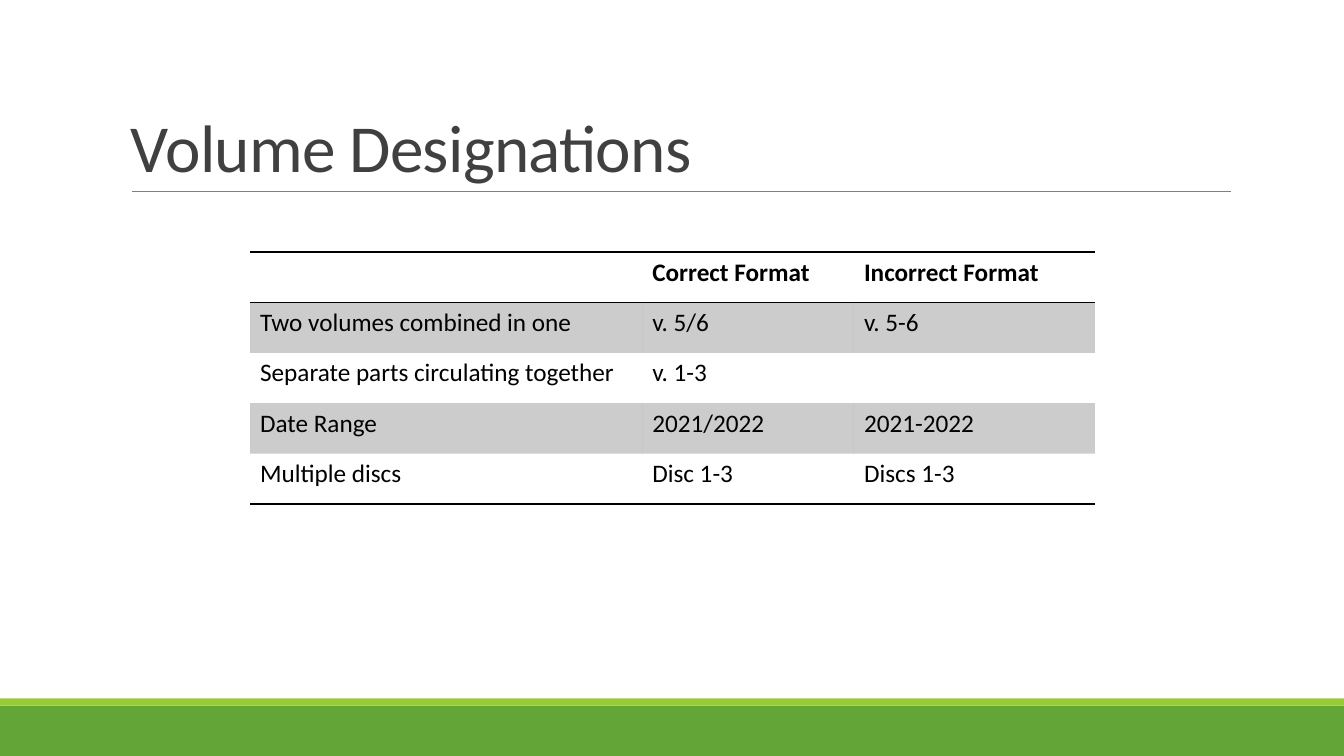
from dataclasses import dataclass

from lxml import etree
from pptx import Presentation
from pptx.dml.color import RGBColor
from pptx.enum.shapes import MSO_CONNECTOR, MSO_SHAPE
from pptx.enum.text import MSO_ANCHOR
from pptx.oxml.ns import qn
from pptx.util import Inches, Pt

RECTANGLE = MSO_SHAPE.RECTANGLE
STRAIGHT = MSO_CONNECTOR.STRAIGHT
BOTTOM = MSO_ANCHOR.BOTTOM
PLAIN_TABLE_STYLE = "{2D5ABB26-0587-4C30-8999-92F81FD0307C}"


@dataclass(frozen=True)
class Theme:
    font: str = "Calibri"
    title_size: int = 48
    table_size: int = 18
    title: str = "404040"
    ink: str = "000000"
    rule: str = "808080"
    green: str = "63A537"
    lime: str = "99CB38"
    band_opacity: int = 20


class SlideBuilder:
    def __init__(self, page, theme):
        self.page = page
        self.theme = theme

    def style(self, para, size, color, bold=False):
        para.font.name = self.theme.font
        para.font.size = Pt(size)
        para.font.bold = bold
        para.font.color.rgb = RGBColor.from_string(color)

    def bar(self, left, top, width, height, color):
        bar = self.page.shapes.add_shape(
            RECTANGLE, Inches(left), Inches(top), Inches(width), Inches(height))
        bar.shadow.inherit = False
        bar.fill.solid()
        bar.fill.fore_color.rgb = RGBColor.from_string(color)
        bar.line.fill.background()

    def rule(self, left, right, top):
        rule = self.page.shapes.add_connector(
            STRAIGHT, Inches(left), Inches(top), Inches(right), Inches(top))
        rule.line.color.rgb = RGBColor.from_string(self.theme.rule)
        rule.line.width = Pt(0.5)
        etree.SubElement(rule._element.spPr, qn("a:effectLst"))

    def title(self, text, left, top, width, height):
        box = self.page.shapes.add_textbox(
            Inches(left), Inches(top), Inches(width), Inches(height))
        frame = box.text_frame
        frame.word_wrap = True
        frame.vertical_anchor = BOTTOM
        para = frame.paragraphs[0]
        para.line_spacing = 0.85
        span = para.add_run()
        span.text = text
        self.style(para, self.theme.title_size, self.theme.title)
        span.font._element.set("spc", "-50")

    def border(self, cell, side):
        line = etree.SubElement(cell._tc.get_or_add_tcPr(), qn(f"a:{side}"), w=str(Pt(1)))
        fill = etree.SubElement(line, qn("a:solidFill"))
        etree.SubElement(fill, qn("a:srgbClr"), val=self.theme.ink)

    def band(self, cell):
        cell.fill.solid()
        cell.fill.fore_color.rgb = RGBColor.from_string(self.theme.ink)
        color = cell._tc.tcPr.find(".//" + qn("a:srgbClr") + "[last()]")
        etree.SubElement(color, qn("a:alpha"), val=str(self.theme.band_opacity * 1000))

    def table(self, rows, left, top, widths, row_height):
        table = self.page.shapes.add_table(
            len(rows), len(widths), Inches(left), Inches(top),
            Inches(sum(widths)), Inches(row_height * len(rows))).table
        table.first_row = True
        table.horz_banding = False
        table._tbl.tblPr.find(qn("a:tableStyleId")).text = PLAIN_TABLE_STYLE
        for column, width in zip(table.columns, widths):
            column.width = Inches(width)
        for index, values in enumerate(rows):
            table.rows[index].height = Inches(row_height)
            header = index == 0
            for cell, value in zip(table.rows[index].cells, values):
                cell.text = value
                self.style(cell.text_frame.paragraphs[0], self.theme.table_size,
                           self.theme.ink, bold=header)
                # Rules frame the header and close the table
                if header:
                    self.border(cell, "lnT")
                if header or index == len(rows) - 1:
                    self.border(cell, "lnB")
                # Odd rows are shaded
                if index % 2:
                    self.band(cell)


def main():
    deck = Presentation()
    deck.slide_width = Inches(13.33)
    deck.slide_height = Inches(7.5)
    theme = Theme()
    builder = SlideBuilder(deck.slides.add_slide(deck.slide_layouts[6]), theme)

    # Footer bars
    builder.bar(0, 7, 13.33, 0.5, theme.green)
    builder.bar(0, 6.93, 13.33, 0.07, theme.lime)

    # Heading
    builder.rule(1.31, 12.21, 1.9)
    builder.title("Volume Designations", 1.2, 0.31, 11, 1.59)

    # Format table
    formats = [
        ("", "Correct Format", "Incorrect Format"),
        ("Two volumes combined in one", "v. 5/6", "v. 5-6"),
        ("Separate parts circulating together", "v. 1-3", ""),
        ("Date Range", "2021/2022", "2021-2022"),
        ("Multiple discs", "Disc 1-3", "Discs 1-3"),
    ]
    builder.table(formats, 2.48, 2.5, (3.89, 2.1, 2.39), 0.5)

    deck.save("out.pptx")


if __name__ == "__main__":
    main()
